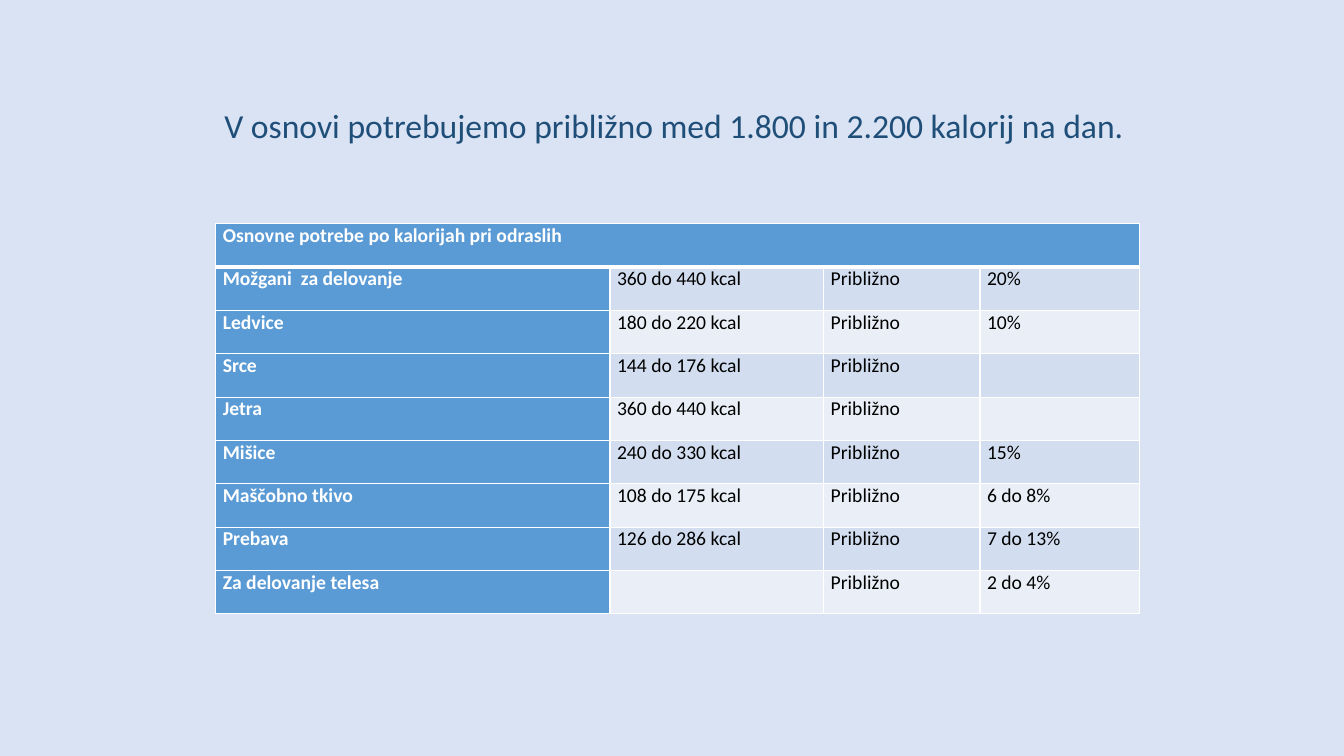
from dataclasses import dataclass

from lxml import etree
from pptx import Presentation
from pptx import util as u
from pptx.dml.color import RGBColor
from pptx.enum import text
from pptx.oxml import ns
from pptx.slide import Slide
from pptx.table import _Cell


@dataclass(frozen=True)
class Theme:
    font: str = "Calibri"
    title_size: int = 24
    cell_size: int = 14
    background: str = "DAE3F3"
    title: str = "1F4E79"
    heading_fill: str = "5B9BD5"
    heading_text: str = "FFFFFF"
    body_text: str = "000000"
    bands: tuple[str, str] = ("D2DEEF", "EAEFF7")
    border: str = "FFFFFF"
    thin: int = 1
    thick: int = 3


@dataclass(frozen=True)
class Need:
    organ: str
    energy: str
    share: str
    qualifier: str = "Približno"

    def cells(self) -> tuple[str, ...]:
        return self.organ, self.energy, self.qualifier, self.share


THEME = Theme()
HEADLINE = "V osnovi potrebujemo približno med 1.800 in 2.200 kalorij na dan."
TABLE_HEADING = "Osnovne potrebe po kalorijah pri odraslih"
NEEDS = (
    Need("Možgani  za delovanje", "360 do 440 kcal", "20%"),
    Need("Ledvice", "180 do 220 kcal", "10%"),
    Need("Srce", "144 do 176 kcal", ""),
    Need("Jetra", "360 do 440 kcal", ""),
    Need("Mišice", "240 do 330 kcal", "15%"),
    Need("Maščobno tkivo", "108 do 175 kcal", "6 do 8%"),
    Need("Prebava", "126 do 286 kcal", "7 do 13%"),
    Need("Za delovanje telesa", "", "2 do 4%"),
)
COLUMN_WIDTHS = (3.91, 2.12, 1.55, 1.58)
ROW_HEIGHT = 0.43


def add_headline(slide: Slide) -> None:
    headline = slide.shapes.title
    place = {"left": 1.83, "top": 0.83, "width": 9.71, "height": 0.82}
    for side, inches in place.items():
        setattr(headline, side, u.Inches(inches))
    frame = headline.text_frame
    frame.text = HEADLINE
    layout = {
        "word_wrap": True,
        "auto_size": text.MSO_AUTO_SIZE.NONE,
        "vertical_anchor": text.MSO_ANCHOR.MIDDLE,
    }
    for name, value in layout.items():
        setattr(frame, name, value)
    paragraph = frame.paragraphs[0]
    paragraph.alignment = text.PP_ALIGN.CENTER
    font = paragraph.runs[0].font
    font.name, font.size = THEME.font, u.Pt(THEME.title_size)
    font.color.rgb = RGBColor.from_string(THEME.title)


def set_borders(cell: _Cell, top: int, bottom: int) -> None:
    """Outline a cell; the left and right lines are always thin."""
    properties = cell._tc.get_or_add_tcPr()
    widths = {"lnL": THEME.thin, "lnR": THEME.thin, "lnT": top, "lnB": bottom}
    for position, (tag, points) in enumerate(widths.items()):
        line = etree.Element(ns.qn(f"a:{tag}"), w=str(u.Pt(points)))
        fill = etree.SubElement(line, ns.qn("a:solidFill"))
        etree.SubElement(fill, ns.qn("a:srgbClr"), val=THEME.border)
        properties.insert(position, line)


def fill_cell(cell: _Cell, words: str, fill: str, heading: bool) -> None:
    margins = {"left": 0.07, "right": 0.07, "top": 0, "bottom": 0}
    for side, inches in margins.items():
        setattr(cell, f"margin_{side}", u.Inches(inches))
    cell.fill.solid()
    cell.fill.fore_color.rgb = RGBColor.from_string(fill)
    cell.text = words
    for run in cell.text_frame.paragraphs[0].runs:
        looks = {"name": THEME.font, "size": u.Pt(THEME.cell_size), "bold": heading}
        for name, value in looks.items():
            setattr(run.font, name, value)
        color = THEME.heading_text if heading else THEME.body_text
        run.font.color.rgb = RGBColor.from_string(color)


def add_needs_table(slide: Slide) -> None:
    rows = [(TABLE_HEADING, "", "", ""), *(need.cells() for need in NEEDS)]
    needs = slide.shapes.add_table(
        len(rows), len(COLUMN_WIDTHS), u.Inches(2.14), u.Inches(2.22),
        u.Inches(sum(COLUMN_WIDTHS)), u.Inches(ROW_HEIGHT * len(rows)),
    ).table
    for column, width in zip(needs.columns, COLUMN_WIDTHS):
        column.width = u.Inches(width)
    for r, words_in_row in enumerate(rows):
        needs.rows[r].height = u.Inches(ROW_HEIGHT)
        for c, words in enumerate(words_in_row):
            heading = r == 0 or c == 0
            fill = THEME.heading_fill if heading else THEME.bands[(r - 1) % 2]
            cell = needs.cell(r, c)
            fill_cell(cell, words, fill, heading)
            set_borders(
                cell,
                top=THEME.thick if r == 1 else THEME.thin,
                bottom=THEME.thick if r == 0 else THEME.thin,
            )
    needs.cell(0, 0).merge(needs.cell(0, len(COLUMN_WIDTHS) - 1))


def main() -> None:
    deck = Presentation()
    deck.slide_width, deck.slide_height = u.Inches(13.33), u.Inches(7.5)
    slide = deck.slides.add_slide(deck.slide_layouts.get_by_name("Title Only"))
    slide.background.fill.solid()
    slide.background.fill.fore_color.rgb = RGBColor.from_string(THEME.background)
    add_headline(slide)
    add_needs_table(slide)
    deck.save("out.pptx")


if __name__ == "__main__":
    main()
